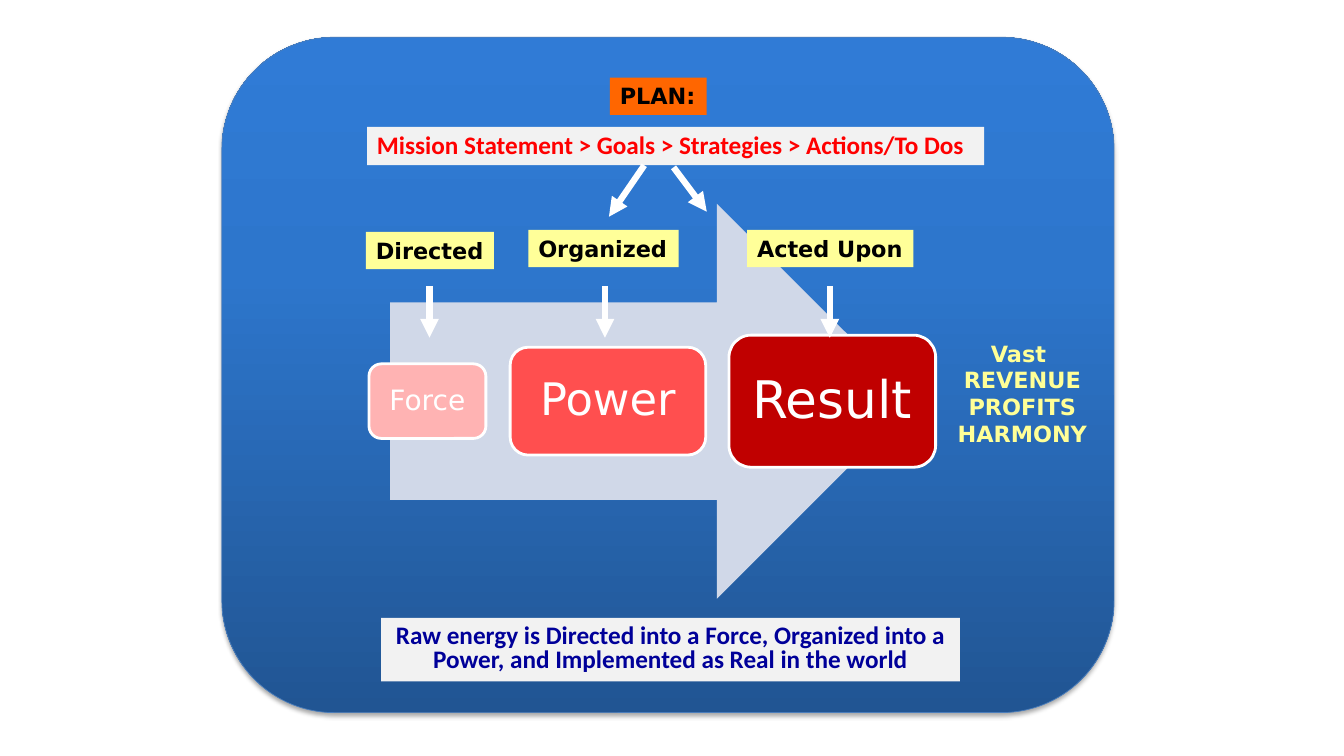
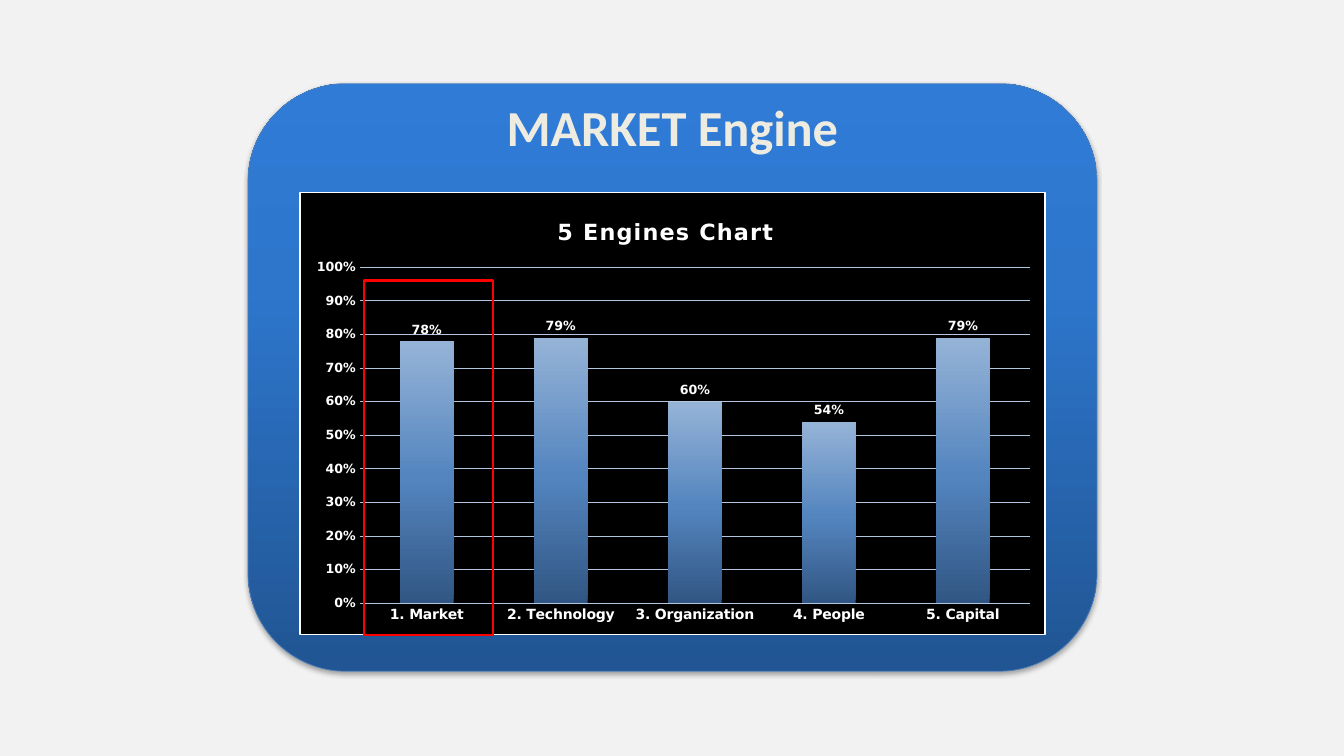
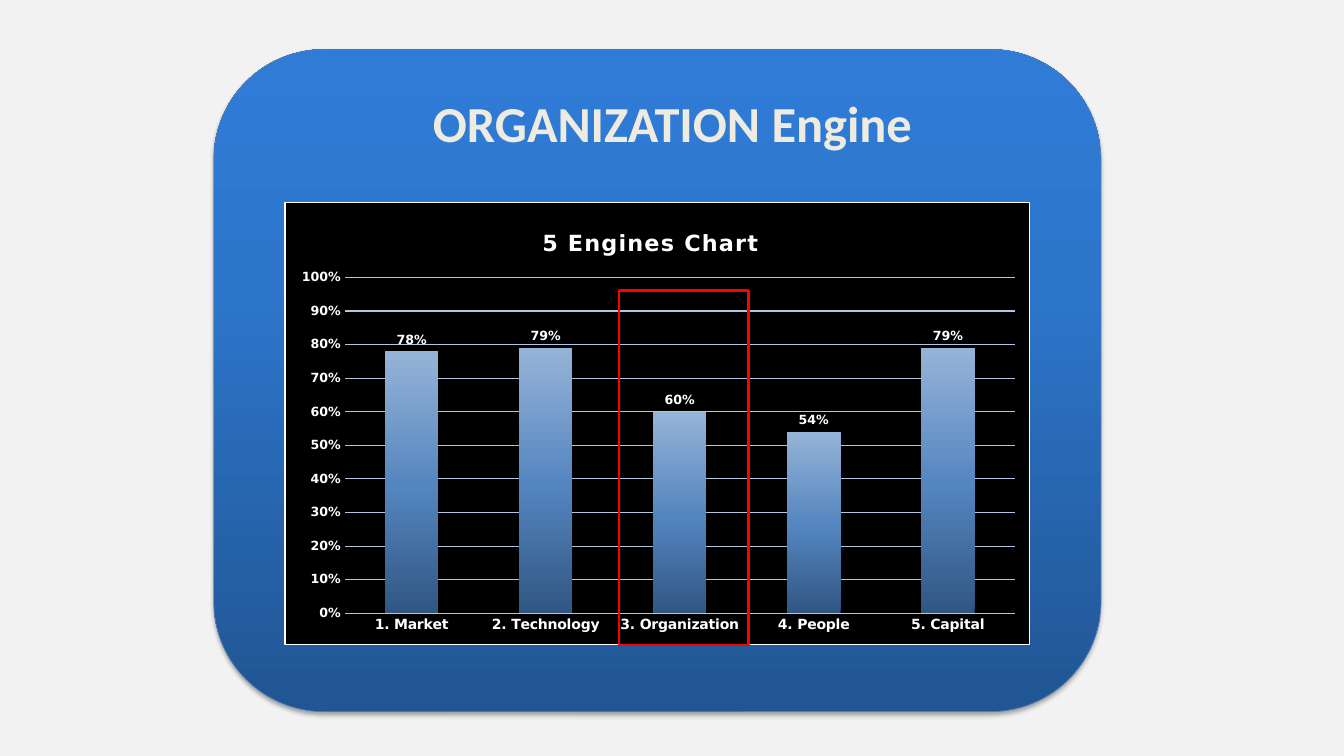
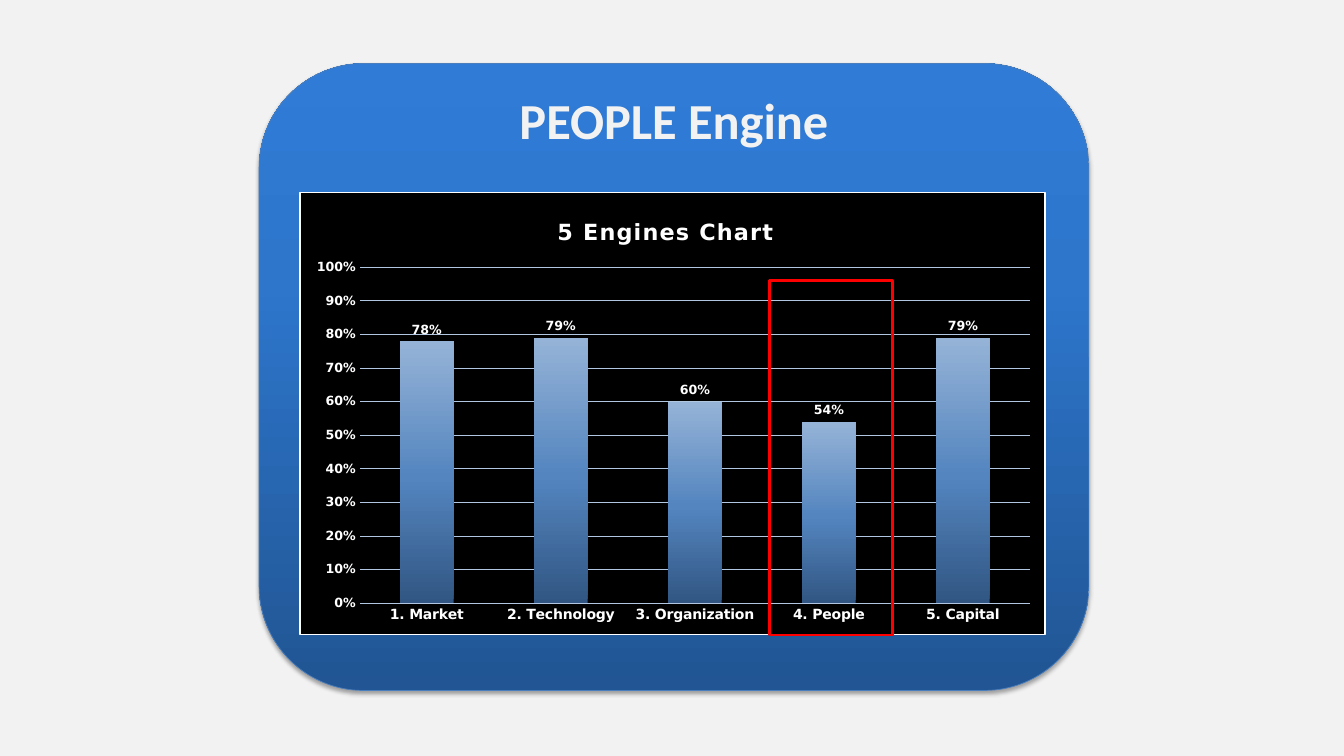
from lxml.etree import SubElement
from pptx import Presentation
from pptx.chart.data import CategoryChartData
from pptx.dml.color import RGBColor
from pptx.enum.chart import XL_CHART_TYPE as ChartType, XL_LABEL_POSITION as LabelPosition, XL_TICK_MARK as TickMark
from pptx.enum.shapes import MSO_CONNECTOR as Connector, MSO_SHAPE as Shape
from pptx.enum.text import MSO_ANCHOR as Anchor, PP_ALIGN as Align
from pptx.oxml import parse_xml
from pptx.oxml.ns import nsdecls, qn
from pptx.util import Inches, Pt

HEADING_FONT = "Calibri"
BODY_FONT = "DejaVu Sans"
WHITE, BLACK, PALE, CREAM = "FFFFFF", "000000", "F2F2F2", "EEECE1"
RED, YELLOW, ORANGE, NAVY = "FF0000", "FFFF99", "FF6600", "000099"
PANEL_STOPS = [(0, "215593"), (65, "2D76CC"), (100, "307BD6")]
COLUMN_STOPS = [(0, "315683"), (48, "5485BF"), (100, "95B3D7")]
ENGINES = {
    "1. Market": 0.78,
    "2. Technology": 0.79,
    "3. Organization": 0.6,
    "4. People": 0.54,
    "5. Capital": 0.79,
}
CHART_SIZE = (7.4, 4.4)
COLUMN_STEP = 1.34
ENGINE_SLIDES = [
    dict(title="MARKET Engine", panel=(2.46, 0.83, 8.42, 5.83), title_box=(2.45, 0.83, 8.44, 0.93),
         chart_at=(2.97, 1.9), column=0, mark_width=1.28, title_color=CREAM),
    dict(title="ORGANIZATION Engine", panel=(2.12, 0.49, 8.8, 6.57), title_box=(0.92, 0.74, 11.5, 1.02),
         chart_at=(2.82, 2), column=2, mark_width=1.28, title_color=CREAM),
    dict(title="PEOPLE Engine", panel=(2.57, 0.63, 8.23, 6.22), title_box=(2.44, 0.71, 8.49, 1.02),
         chart_at=(2.97, 1.9), column=3, mark_width=1.22, title_color=PALE),
]


def rgb(value):
    return RGBColor.from_string(value)


def inches(*lengths):
    return [Inches(length) for length in lengths]


def apply(target, **values):
    for name, value in values.items():
        setattr(target, name, value)


def style_font(font, size, color, bold=False, name=BODY_FONT):
    apply(font, size=Pt(size), bold=bold, name=name)
    font.color.rgb = rgb(color)


def style_line(line, color, width):
    line.color.rgb = rgb(color)
    line.width = Pt(width)


def fill_gradient(format_owner, properties, stops):
    format_owner.fill.gradient()
    gradient = properties.find(qn("a:gradFill"))
    for child in list(gradient):
        gradient.remove(child)
    stop_list = SubElement(gradient, qn("a:gsLst"))
    for position, color in stops:
        stop = SubElement(stop_list, qn("a:gs"), pos=str(position * 1000))
        SubElement(stop, qn("a:srgbClr"), val=color)
    SubElement(gradient, qn("a:lin"), ang="16200000", scaled="0")


def write(shape, lines, size, color, bold=True, font=BODY_FONT, align=Align.CENTER,
          anchor=Anchor.MIDDLE, spacing=None, before=None, wrap=True):
    frame = shape.text_frame
    apply(frame, word_wrap=wrap, vertical_anchor=anchor)
    for index, line in enumerate(lines):
        paragraph = frame.paragraphs[0] if index == 0 else frame.add_paragraph()
        apply(paragraph, alignment=align, line_spacing=spacing, space_before=before)
        run = paragraph.add_run()
        run.text = line
        style_font(run.font, size, color, bold, font)


def add_block(shapes, kind, box, fill=None, outline=None):
    shape = shapes.add_shape(kind, *inches(*box))
    shape.shadow.inherit = False
    if fill:
        shape.fill.solid()
        shape.fill.fore_color.rgb = rgb(fill)
    else:
        shape.fill.background()
    if outline:
        style_line(shape.line, *outline)
    else:
        shape.line.fill.background()
    return shape


def add_panel(slide, box):
    panel = add_block(slide.shapes, Shape.ROUNDED_RECTANGLE, box, outline=("4B7EBC", 0.5))
    properties = panel._element.spPr
    fill_gradient(panel, properties, PANEL_STOPS)
    effects = properties.find(qn("a:effectLst"))
    shadow = SubElement(effects, qn("a:outerShdw"), blurRad="39400", dist="25400",
                        dir="5400000", rotWithShape="0")
    color = SubElement(shadow, qn("a:srgbClr"), val=BLACK)
    SubElement(color, qn("a:alpha"), val="35000")


def add_arrow(slide, start, end):
    arrow = slide.shapes.add_connector(Connector.STRAIGHT, *inches(*start, *end))
    style_line(arrow.line, WHITE, 4.5)
    SubElement(arrow.line._get_or_add_ln(), qn("a:tailEnd"), type="triangle")
    SubElement(arrow._element.spPr, qn("a:effectLst"))


def add_process(slide, box):
    left, top, width, height = box
    shapes = slide.shapes.add_group_shape().shapes
    add_block(shapes, Shape.RIGHT_ARROW, box, "D0D8E8")
    middle = top + height / 2
    steps = [
        ("Force", -0.21, 1.16, 0.74, "FFB3B3", 20),
        ("Power", 1.19, 1.94, 1.07, "FF4F4F", 32),
        ("Result", 3.36, 2.05, 1.31, "C00000", 37),
    ]
    for name, offset, step_width, step_height, fill, size in steps:
        step_box = (left + offset, middle - step_height / 2, step_width, step_height)
        step = add_block(shapes, Shape.ROUNDED_RECTANGLE, step_box, fill, (WHITE, 2))
        write(step, [name], size, WHITE, bold=False, spacing=0.9)


def add_tags(slide):
    tags = [
        ("PLAN:", (6.05, 0.77, 0.96, 0.37), ORANGE),
        ("Directed", (3.63, 2.3, 1.27, 0.37), YELLOW),
        ("Organized", (5.24, 2.28, 1.49, 0.37), YELLOW),
        ("Acted Upon", (7.41, 2.28, 1.65, 0.37), YELLOW),
    ]
    for text, box, fill in tags:
        tag = add_block(slide.shapes, Shape.RECTANGLE, box, fill)
        write(tag, [text], 16, BLACK, align=Align.LEFT, anchor=Anchor.TOP, wrap=False)


def add_banner(slide, box, text, color, align, spacing):
    banner = add_block(slide.shapes, Shape.RECTANGLE, box, PALE)
    write(banner, [text], 18, color, font=HEADING_FONT, align=align, spacing=spacing, before=Pt(10))


def set_layout(parent, successor, left, top, width=None, height=None):
    for old in parent.findall(qn("c:layout")):
        parent.remove(old)
    values = [("x", left), ("y", top), ("w", width), ("h", height)]
    target = '<c:layoutTarget val="inner"/>' if width else ""
    modes = "".join(f'<c:{axis}Mode val="edge"/>' for axis in "xy")
    sizes = "".join(f'<c:{name} val="{value}"/>' for name, value in values if value)
    layout = parse_xml(f'<c:layout {nsdecls("c")}><c:manualLayout>{target}{modes}{sizes}'
                       "</c:manualLayout></c:layout>")
    parent.insert(successor, layout)


def style_axis(axis, size):
    apply(axis, major_tick_mark=TickMark.NONE, minor_tick_mark=TickMark.NONE)
    axis.format.line.fill.background()
    style_font(axis.tick_labels.font, size, WHITE, True)


def style_chart_area(chart):
    area = parse_xml(
        f'<c:spPr {nsdecls("c", "a")}><a:solidFill><a:srgbClr val="{BLACK}"/></a:solidFill>'
        f'<a:ln w="12700"><a:solidFill><a:srgbClr val="{WHITE}"/></a:solidFill></a:ln></c:spPr>')
    chart._chartSpace.chart.addnext(area)


def add_engine_chart(slide, left, top):
    data = CategoryChartData(number_format="0%")
    data.categories = list(ENGINES)
    data.add_series("Series 1", list(ENGINES.values()))
    frame = slide.shapes.add_chart(ChartType.COLUMN_CLUSTERED, *inches(left, top, *CHART_SIZE), data)
    chart = frame.chart
    chart.has_legend = False
    style_font(chart.font, 10, WHITE)
    style_chart_area(chart)

    chart.has_title = True
    title = chart.chart_title
    title.include_in_layout = False
    run = title.text_frame.paragraphs[0].add_run()
    run.text = "5 Engines Chart"
    style_font(run.font, 16, WHITE, True)
    run._r.get_or_add_rPr().set("spc", "100")
    set_layout(title._element, 1, 0.34, 0.05)
    set_layout(chart._chartSpace.chart.plotArea, 0, 0.08, 0.17, 0.9, 0.76)

    style_axis(chart.category_axis, 10)
    value_axis = chart.value_axis
    style_axis(value_axis, 9)
    apply(value_axis, minimum_scale=0, maximum_scale=1, major_unit=0.1, has_major_gridlines=True)
    apply(value_axis.tick_labels, number_format="0%", number_format_is_linked=False)
    style_line(value_axis.major_gridlines.format.line, "B0C6E1", 0.75)

    plot = chart.plots[0]
    apply(plot, gap_width=150, overlap=-27, vary_by_categories=False, has_data_labels=True)
    labels = plot.data_labels
    apply(labels, show_value=True, position=LabelPosition.OUTSIDE_END,
          number_format="0%", number_format_is_linked=False)
    style_font(labels.font, 9, WHITE, True)
    series = plot.series[0]
    series_format = series.format
    series_format.fill.solid()
    fill_gradient(series_format, series._element.spPr, COLUMN_STOPS)


def new_slide(presentation, background):
    slide = presentation.slides.add_slide(presentation.slide_layouts[6])
    slide.background.fill.solid()
    slide.background.fill.fore_color.rgb = rgb(background)
    return slide


def build_plan_slide(presentation):
    slide = new_slide(presentation, WHITE)
    add_panel(slide, (2.2, 0.37, 8.85, 6.7))
    add_banner(slide, (3.64, 1.26, 6.12, 0.38),
               "Mission Statement > Goals > Strategies > Actions/To Dos", RED, Align.LEFT, 0.9)
    add_process(slide, (3.87, 2.02, 5.2, 3.92))
    add_banner(slide, (3.78, 6.13, 5.74, 0.63),
               "Raw energy is Directed into a Force, Organized into a Power, "
               "and Implemented as Real in the world", NAVY, Align.CENTER, 0.8)
    add_tags(slide)
    outcome = slide.shapes.add_textbox(*inches(9.39, 3.32, 1.5, 1.18))
    write(outcome, ["Vast ", "REVENUE", "PROFITS", "HARMONY"], 16, "FFFF97", anchor=Anchor.TOP)
    for center in (4.26, 6, 8.23):
        add_arrow(slide, (center, 2.84), (center, 3.35))
    add_arrow(slide, (6.39, 1.64), (6.04, 2.15))
    add_arrow(slide, (6.68, 1.66), (7.01, 2.1))


def build_engine_slide(presentation, title, panel, title_box, chart_at, column, mark_width, title_color):
    slide = new_slide(presentation, PALE)
    add_panel(slide, panel)
    heading = slide.shapes.add_textbox(*inches(*title_box))
    write(heading, [title], 36, title_color, font=HEADING_FONT, spacing=0.9)
    left, top = chart_at
    add_engine_chart(slide, left, top)
    mark = (left + 0.64 + column * COLUMN_STEP, top + 0.88, mark_width, 3.52)
    add_block(slide.shapes, Shape.RECTANGLE, mark, outline=(RED, 2))


def main():
    presentation = Presentation()
    apply(presentation, slide_width=Inches(13.33), slide_height=Inches(7.5))
    build_plan_slide(presentation)
    for details in ENGINE_SLIDES:
        build_engine_slide(presentation, **details)
    presentation.save("out.pptx")


if __name__ == "__main__":
    main()
